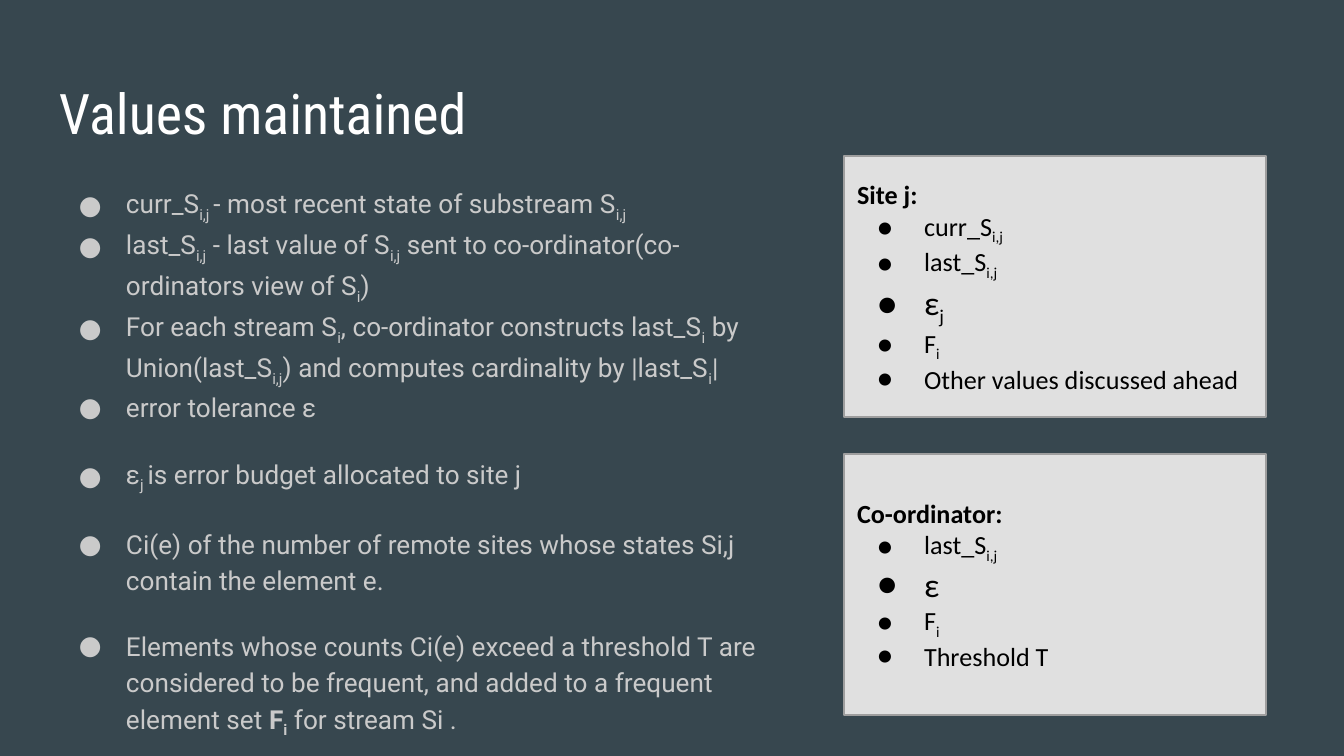
import lxml.etree
import pptx
import pptx.dml.color
import pptx.enum.shapes
import pptx.enum.text
import pptx.oxml.ns
import pptx.util

EMU_PER_PX = 914400 / 134.4

SLATE = pptx.dml.color.RGBColor(0x37, 0x47, 0x4F)
WHITE = pptx.dml.color.RGBColor(0xFF, 0xFF, 0xFF)
BLACK = pptx.dml.color.RGBColor(0x00, 0x00, 0x00)
SILVER = pptx.dml.color.RGBColor(0xCA, 0xCA, 0xCA)
PALE_GREY = pptx.dml.color.RGBColor(0xE0, 0xE0, 0xE0)
MID_GREY = pptx.dml.color.RGBColor(0x9E, 0x9E, 0x9E)

# In the texts below, ~ switches subscript and * switches bold on and off.
# Each body item is its text and the space before it in points.
BODY_ITEMS = [
    ("curr_S~i,j ~- most recent state of substream S~i,j~", 0),
    ("last_S~i,j~ - last value of S~i,j~ sent to co-ordinator"
     "(co-ordinators view of S~i~)", 0),
    ("For each stream S~i~, co-ordinator constructs last_S~i~ by "
     "Union(last_S~i,j~) and computes cardinality by |last_S~i~|", 0),
    ("error tolerance ε", 0),
    ("ε~j ~is error budget allocated to site j", 16),
    ("Ci(e) of the number of remote sites whose states Si,j "
     "contain the element e.", 16),
    ("Elements whose counts Ci(e) exceed a threshold T are considered to be "
     "frequent, and added to a frequent element set *F~i~* for stream Si .", 16),
]

# Each panel item is its text and its size in points.
PANELS = [
    ("Site j:", [("curr_S~i,j~", 14), ("last_S~i,j~", 14), ("ε~j~", 18),
                 ("F~i~", 14), ("Other values discussed ahead", 14)]),
    ("Co-ordinator:", [("last_S~i,j~", 14), ("ε", 18), ("F~i~", 14),
                       ("Threshold T", 14)]),
]


def px(length):
    return pptx.util.Emu(round(length * EMU_PER_PX))


class SlideBuilder:
    title_font = "Roboto Condensed"
    body_font = "Roboto"
    panel_font = "Calibri"
    inset = 13
    indent = 67
    hanging = 47

    def __init__(self, presentation):
        self.slide = presentation.slides.add_slide(presentation.slide_layouts[1])
        fill = self.slide.background.fill
        fill.solid()
        fill.fore_color.rgb = SLATE

    def place(self, shape, left, top, width, height):
        shape.left, shape.top = px(left), px(top)
        shape.width, shape.height = px(width), px(height)

    def frame(self, shape, anchor):
        text_frame = shape.text_frame
        text_frame.word_wrap = True
        text_frame.auto_size = pptx.enum.text.MSO_AUTO_SIZE.NONE
        text_frame.vertical_anchor = anchor
        text_frame.margin_left = text_frame.margin_right = px(self.inset)
        text_frame.margin_top = text_frame.margin_bottom = px(self.inset)
        return text_frame

    def add_runs(self, paragraph, text, font, size, color):
        paragraph.alignment = pptx.enum.text.PP_ALIGN.LEFT
        for span_index, span in enumerate(text.split("*")):
            for piece_index, piece in enumerate(span.split("~")):
                if not piece:
                    continue
                run = paragraph.add_run()
                run.text = piece
                run.font.name = font
                run.font.size = pptx.util.Pt(size)
                run.font.color.rgb = color
                run.font.bold = span_index % 2 == 1
                if piece_index % 2:
                    run.font._element.set("baseline", "-25000")

    def bullet(self, paragraph, font, color):
        properties = paragraph._p.get_or_add_pPr()
        properties.set("marL", str(px(self.indent)))
        properties.set("indent", str(-px(self.hanging)))
        name = pptx.oxml.ns.qn
        bullet_color = lxml.etree.SubElement(properties, name("a:buClr"))
        lxml.etree.SubElement(bullet_color, name("a:srgbClr"), val=str(color))
        lxml.etree.SubElement(properties, name("a:buFont"), typeface=font)
        lxml.etree.SubElement(properties, name("a:buChar"), char="●")

    def title(self, text, *box):
        shape = self.slide.shapes.title
        self.place(shape, *box)
        text_frame = self.frame(shape, pptx.enum.text.MSO_ANCHOR.TOP)
        self.add_runs(text_frame.paragraphs[0], text, self.title_font, 30, WHITE)

    def body(self, items, *box):
        shape = self.slide.placeholders[1]
        self.place(shape, *box)
        text_frame = self.frame(shape, pptx.enum.text.MSO_ANCHOR.TOP)
        for index, (text, space_before) in enumerate(items):
            paragraph = text_frame.add_paragraph() if index else text_frame.paragraphs[0]
            paragraph.line_spacing = 1.15
            paragraph.space_before = pptx.util.Pt(space_before)
            self.bullet(paragraph, self.body_font, SILVER)
            self.add_runs(paragraph, text, self.body_font, 14, SILVER)

    def panel(self, heading, items, *box):
        shape = self.slide.shapes.add_shape(
            pptx.enum.shapes.MSO_SHAPE.RECTANGLE, *map(px, box))
        shape.shadow.inherit = False
        shape.fill.solid()
        shape.fill.fore_color.rgb = PALE_GREY
        shape.line.color.rgb = MID_GREY
        shape.line.width = pptx.util.Pt(0.75)
        text_frame = self.frame(shape, pptx.enum.text.MSO_ANCHOR.MIDDLE)
        self.add_runs(text_frame.paragraphs[0], f"*{heading}*", self.panel_font, 14, BLACK)
        for text, size in items:
            paragraph = text_frame.add_paragraph()
            self.bullet(paragraph, self.panel_font, BLACK)
            self.add_runs(paragraph, text, self.panel_font, size, BLACK)


def main():
    presentation = pptx.Presentation()
    presentation.slide_width, presentation.slide_height = px(1344), px(756)
    builder = SlideBuilder(presentation)

    # Title and list of values
    builder.title("Values maintained", 46, 66, 1253, 85)
    builder.body(BODY_ITEMS, 46, 169, 762, 574)

    # Values kept by each party
    for index, (heading, items) in enumerate(PANELS):
        builder.panel(heading, items, 844, 156 + 298 * index, 422, 261)

    presentation.save("out.pptx")


if __name__ == "__main__":
    main()
